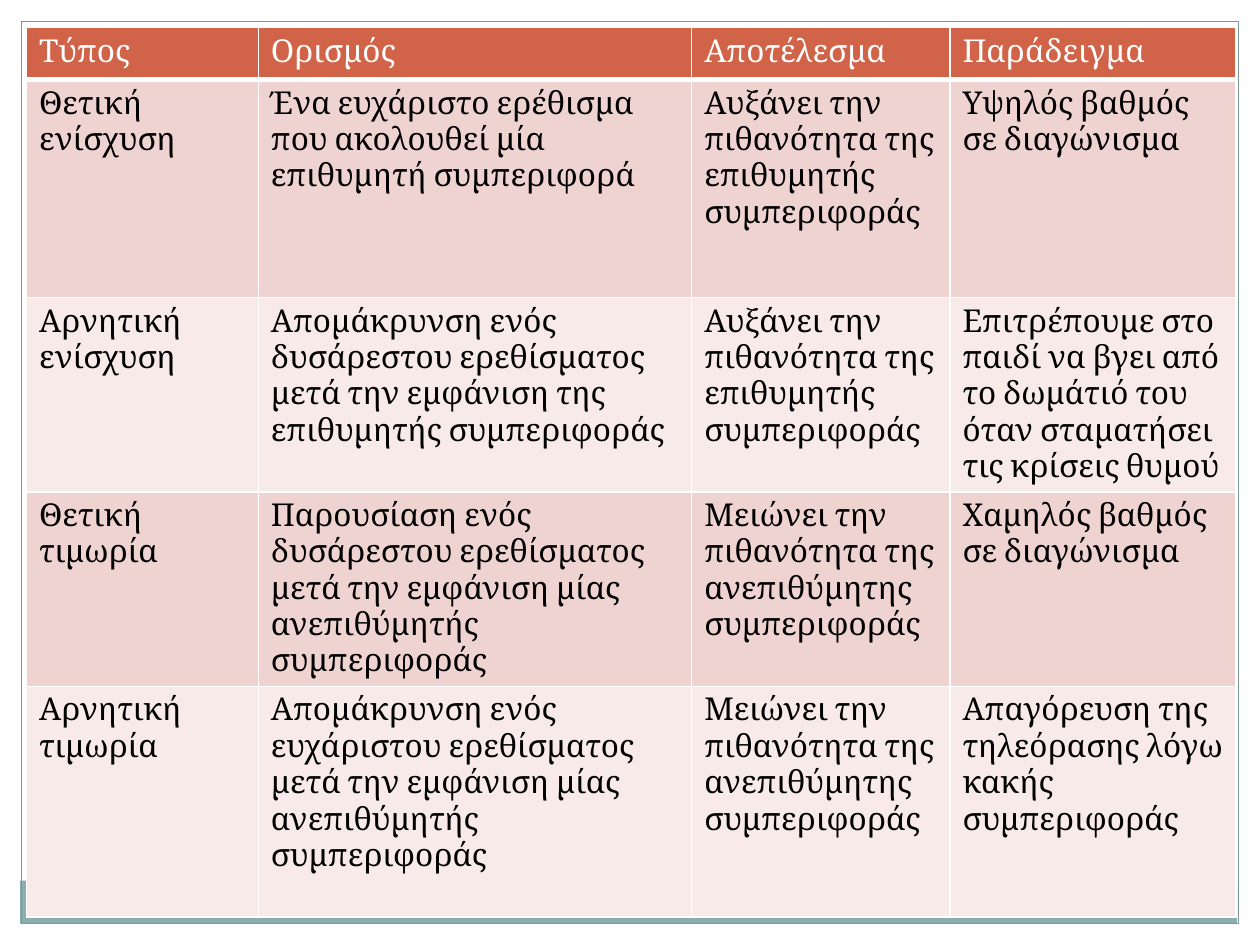
from lxml.etree import SubElement
from pptx import Presentation
from pptx.dml.color import RGBColor
from pptx.enum.shapes import MSO_SHAPE
from pptx.oxml.ns import qn
from pptx.util import Inches, Pt

COLORS = {
    "white": "FFFFFF",
    "black": "000000",
    "header": "D16349",
    "odd_row": "EED3D0",
    "even_row": "F7EAE9",
    "footer_bar": "8CADAE",
    "frame": "7C999A",
}
TEXT_FORMAT = {"name": "Cambria", "size": Pt(18), "bold": False}

SLIDE_WIDTH, SLIDE_HEIGHT, MARGIN = 10, 7.5, 0.17
COLUMN_WIDTHS = [1.84, 3.44, 2.05, 2.27]
ROW_HEIGHTS = [0.41, 1.73, 1.54, 1.54, 1.83]
THIN, THICK = 1, 3

INCREASES = "Αυξάνει την πιθανότητα της επιθυμητής συμπεριφοράς"
DECREASES = "Μειώνει την πιθανότητα της ανεπιθύμητης συμπεριφοράς"
ROWS = [
    ("Τύπος", "Ορισμός", "Αποτέλεσμα", "Παράδειγμα"),
    ("Θετική ενίσχυση",
     "Ένα ευχάριστο ερέθισμα που ακολουθεί μία επιθυμητή συμπεριφορά",
     INCREASES,
     "Υψηλός βαθμός σε διαγώνισμα"),
    ("Αρνητική ενίσχυση",
     "Απομάκρυνση ενός δυσάρεστου ερεθίσματος μετά την εμφάνιση της "
     "επιθυμητής συμπεριφοράς",
     INCREASES,
     "Επιτρέπουμε στο παιδί να βγει από το δωμάτιό του όταν σταματήσει "
     "τις κρίσεις θυμού"),
    ("Θετική τιμωρία",
     "Παρουσίαση ενός δυσάρεστου ερεθίσματος μετά την εμφάνιση μίας "
     "ανεπιθύμητής συμπεριφοράς",
     DECREASES,
     "Χαμηλός βαθμός σε διαγώνισμα"),
    ("Αρνητική τιμωρία",
     "Απομάκρυνση ενός ευχάριστου ερεθίσματος μετά την εμφάνιση μίας "
     "ανεπιθύμητής συμπεριφοράς",
     DECREASES,
     "Απαγόρευση της τηλεόρασης λόγω κακής συμπεριφοράς"),
]


def rgb(name):
    return RGBColor.from_string(COLORS[name])


def add_panel(slide, box, fill=None, line=None):
    panel = slide.shapes.add_shape(MSO_SHAPE.RECTANGLE, *map(Inches, box))
    panel.shadow.inherit = False
    if fill:
        panel.fill.solid()
        panel.fill.fore_color.rgb = rgb(fill)
    else:
        panel.fill.background()
    if line:
        panel.line.color.rgb = rgb(line)
        panel.line.width = Pt(0.75)
    else:
        panel.line.fill.background()


def set_borders(cell, widths):
    """Draw white borders; call before the fill, which must follow them."""
    properties = cell._tc.get_or_add_tcPr()
    for side, width in widths.items():
        border = SubElement(properties, qn(f"a:ln{side}"), w=str(Pt(width)))
        solid = SubElement(border, qn("a:solidFill"))
        SubElement(solid, qn("a:srgbClr"), val=COLORS["white"])


def format_cell(cell, text, row):
    set_borders(cell, {
        "L": THIN,
        "R": THIN,
        "T": THICK if row == 1 else THIN,
        "B": THICK if row == 0 else THIN,
    })
    band = "header" if row == 0 else "odd_row" if row % 2 else "even_row"
    cell.fill.solid()
    cell.fill.fore_color.rgb = rgb(band)

    run = cell.text_frame.paragraphs[0].add_run()
    run.text = text
    for attribute, value in TEXT_FORMAT.items():
        setattr(run.font, attribute, value)
    run.font.color.rgb = rgb("black" if row else "white")


def add_conditioning_table(slide):
    table = slide.shapes.add_table(
        len(ROWS), len(COLUMN_WIDTHS), Inches(0.21), Inches(0.22),
        Inches(sum(COLUMN_WIDTHS)), Inches(sum(ROW_HEIGHTS))).table
    for column, width in zip(table.columns, COLUMN_WIDTHS):
        column.width = Inches(width)
    for row, height in zip(table.rows, ROW_HEIGHTS):
        row.height = Inches(height)
    for row, texts in enumerate(ROWS):
        for column, text in enumerate(texts):
            format_cell(table.cell(row, column), text, row)


def main():
    presentation = Presentation()
    presentation.slide_width = Inches(SLIDE_WIDTH)
    presentation.slide_height = Inches(SLIDE_HEIGHT)
    slide = presentation.slides.add_slide(presentation.slide_layouts[6])

    # White margins at the top, right and left
    for box in [(0, 0, SLIDE_WIDTH, MARGIN),
                (SLIDE_WIDTH - MARGIN, 0, MARGIN, SLIDE_HEIGHT),
                (0, 0, MARGIN, SLIDE_HEIGHT)]:
        add_panel(slide, box, fill="white")

    # Footer bar and outer frame
    add_panel(slide, (0.16, 6.99, 9.66, 0.34), fill="footer_bar")
    add_panel(slide, (MARGIN, MARGIN, SLIDE_WIDTH - 2 * MARGIN,
                      SLIDE_HEIGHT - 2 * MARGIN), line="frame")

    # Types of reinforcement and punishment
    add_conditioning_table(slide)
    presentation.save("out.pptx")


if __name__ == "__main__":
    main()
